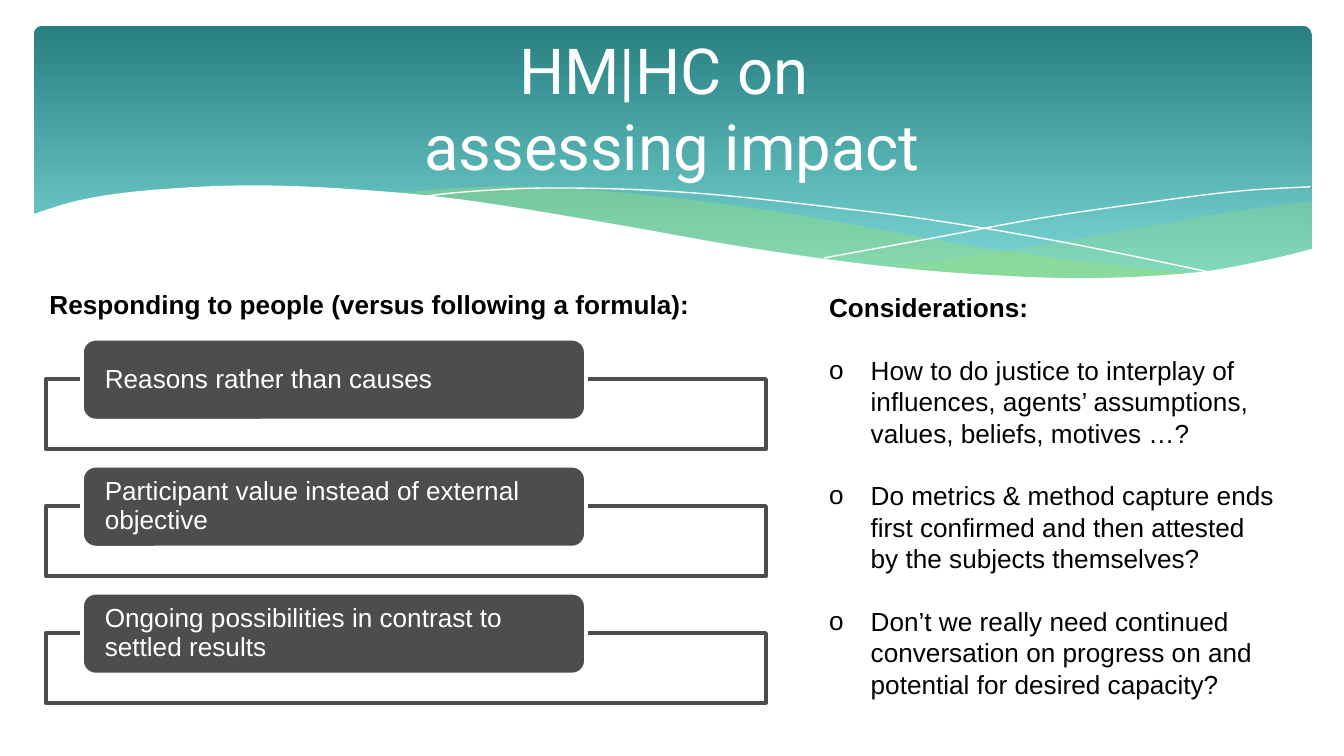
from lxml.etree import SubElement
from pptx import Presentation
from pptx.dml.color import RGBColor
from pptx.enum.shapes import MSO_SHAPE
from pptx.enum.text import MSO_ANCHOR, MSO_AUTO_SIZE, PP_ALIGN
from pptx.oxml.ns import qn
from pptx.util import Inches, Pt

COLORS = {"teal": "277F80", "aqua": "7AD6D6", "green": "99DE75",
          "white": "FFFFFF", "black": "000000", "gray": "4D4D4D"}
TITLE_LINES = ["HM|HC on ", "assessing impact"]
RESPONSE_HEADING = "Responding to people (versus following a formula):"
RESPONSES = ["Reasons rather than causes",
             "Participant value instead of external objective",
             "Ongoing possibilities in contrast to settled results"]
CONSIDERATION_HEADING = "Considerations:"
CONSIDERATIONS = [
    "How to do justice to interplay of influences, agents’ assumptions, values, beliefs, motives …?",
    "Do metrics & method capture ends first confirmed and then attested by the subjects themselves?",
    "Don’t we really need continued conversation on progress on and potential for desired capacity?",
]
RIGHT_WAVE = [
    [(9.76, 1.5), (9.21, 1.57), (8.61, 1.67), (7.53, 1.86), (6.61, 1.99)],
    [(6.61, 1.99), (7.19, 2.04), (7.81, 2.08), (8.35, 2.08), (8.89, 2.04),
     (9.35, 1.96), (9.76, 1.85)],
]
MIDDLE_WAVE = [
    [(8.93, 2.04), (8.07, 1.95), (7.06, 1.8), (6.29, 1.66), (5.55, 1.54),
     (4.89, 1.46), (4.2, 1.4), (3.61, 1.39), (2.86, 1.44)],
    [(2.86, 1.44), (3.62, 1.52), (4.49, 1.66), (5.66, 1.86), (6.5, 1.98),
     (7.22, 2.05), (7.85, 2.08), (8.38, 2.08), (8.93, 2.04)],
]
WHITE_WAVE = [
    [(9.77, 1.85), (9.4, 1.94), (8.87, 2.03), (8.09, 2.07), (7.26, 2.04), (6.48, 1.97),
     (5.55, 1.84), (4.47, 1.65), (3.4, 1.48), (2.5, 1.4), (1.77, 1.38), (1.06, 1.42),
     (0.59, 1.49), (0.23, 1.6)],
    [(0.23, 2.47), (9.77, 2.47)],
]
WAVE_LINES = [
    [(3.09, 1.47), (3.44, 1.43), (4.01, 1.4), (4.69, 1.41), (5.33, 1.45), (6.08, 1.53),
     (6.95, 1.64), (7.95, 1.81), (9.07, 2.04)],
    [(6.13, 1.92), (6.95, 1.77), (7.76, 1.62), (8.66, 1.49), (9.24, 1.42), (9.75, 1.39)],
]


def rgb(name):
    """Return the named color."""
    return RGBColor.from_string(COLORS[name])


def smooth_curve(knots, steps=6):
    """Interpolate a Catmull-Rom curve through the knots."""
    padded = [knots[0], *knots, knots[-1]]
    points = [knots[0]]
    for before, start, end, after in zip(padded, padded[1:], padded[2:], padded[3:]):
        for step in range(1, steps + 1):
            t = step / steps
            points.append(tuple(
                b + ((c - a) * t + (2 * a - 5 * b + 4 * c - d) * t ** 2
                     + (3 * b - a - 3 * c + d) * t ** 3) / 2
                for a, b, c, d in zip(before, start, end, after)))
    return points


def add_wave(slide, edges, fill=None, opacity=100):
    """Draw a filled wave, or a thin white line when no fill is named."""
    points = [(Inches(x), Inches(y)) for edge in edges for x, y in smooth_curve(edge)]
    builder = slide.shapes.build_freeform(*points[0])
    builder.add_line_segments(points[1:], close=fill is not None)
    wave = builder.convert_to_shape()
    wave.shadow.inherit = False
    if fill is None:
        wave.fill.background()
        wave.line.color.rgb = rgb("white")
        wave.line.width = Pt(0.75)
        return
    wave.fill.solid()
    wave.fill.fore_color.rgb = rgb(fill)
    wave.line.fill.background()
    if opacity < 100:
        color = wave.element.spPr.find(qn("a:solidFill"))[0]
        SubElement(color, qn("a:alpha"), val=str(opacity * 1000))


def add_box(slide, kind, left, top, width, height, fill, line):
    """Add a flat outlined shape."""
    box = slide.shapes.add_shape(kind, Inches(left), Inches(top), Inches(width), Inches(height))
    box.shadow.inherit = False
    box.fill.solid()
    box.fill.fore_color.rgb = rgb(fill)
    box.line.color.rgb = rgb(line)
    box.line.width = Pt(2)
    return box


def add_run(paragraph, text, color="black", size=14, font="Arial", bold=False):
    """Add one formatted run."""
    run = paragraph.add_run()
    run.text = text
    run.font.name = font
    run.font.size = Pt(size)
    run.font.bold = bold
    run.font.color.rgb = rgb(color)


def add_text_box(slide, left, top, width, height, heading):
    """Add a wrapping text box that opens with a bold heading."""
    box = slide.shapes.add_textbox(Inches(left), Inches(top), Inches(width), Inches(height))
    box.text_frame.word_wrap = True
    add_run(box.text_frame.paragraphs[0], heading, bold=True)
    return box.text_frame


def add_banner(slide):
    """Draw the gradient banner and its waves."""
    banner = add_box(slide, MSO_SHAPE.ROUNDED_RECTANGLE, 0.25, 0.19, 9.51, 2.02, "teal", "teal")
    banner.adjustments[0] = 0.034
    banner.line.fill.background()
    banner.fill.gradient()
    banner.fill.gradient_angle = 270
    for stop, (position, color) in zip(banner.fill.gradient_stops, [(0, "teal"), (0.9, "aqua")]):
        stop.position = position
        stop.color.rgb = rgb(color)
    add_wave(slide, RIGHT_WAVE, "green", 29)
    add_wave(slide, MIDDLE_WAVE, "green", 40)
    for line in WAVE_LINES:
        add_wave(slide, [line])
    add_wave(slide, WHITE_WAVE, "white")


def format_title(slide):
    """Place the title above the banner and fill it in."""
    title = slide.shapes.title
    title.element.getparent().append(title.element)
    title.left, title.top, title.width, title.height = map(Inches, (0.5, 0.28, 9, 1.03))
    frame = title.text_frame
    frame.auto_size = MSO_AUTO_SIZE.NONE
    frame.vertical_anchor = MSO_ANCHOR.MIDDLE
    paragraph = frame.paragraphs[0]
    paragraph.alignment = PP_ALIGN.CENTER
    for index, line in enumerate(TITLE_LINES):
        if index:
            paragraph.add_line_break()
        add_run(paragraph, line, "white", 34, "Roboto")


def add_responses(slide):
    """Stack the labelled frames on the left."""
    add_text_box(slide, 0.27, 2.1, 5.43, 0.34, RESPONSE_HEADING)
    for index, response in enumerate(RESPONSES):
        top = 2.52 + index * 1.89 / 2
        add_box(slide, MSO_SHAPE.RECTANGLE, 0.34, top + 0.3, 5.36, 0.52, "white", "gray")
        label = add_box(slide, MSO_SHAPE.ROUNDED_RECTANGLE, 0.61, top, 3.75, 0.61, "gray", "white")
        frame = label.text_frame
        frame.word_wrap = True
        frame.vertical_anchor = MSO_ANCHOR.MIDDLE
        frame.margin_left = frame.margin_right = Inches(0.14)
        frame.margin_top = frame.margin_bottom = 0
        paragraph = frame.paragraphs[0]
        paragraph.alignment = PP_ALIGN.LEFT
        paragraph.line_spacing = 0.9
        add_run(paragraph, response, "white")


def add_considerations(slide):
    """List the bulleted questions on the right."""
    frame = add_text_box(slide, 6.07, 2.12, 3.52, 3.16, CONSIDERATION_HEADING)
    for consideration in CONSIDERATIONS:
        paragraph = frame.add_paragraph()
        paragraph.space_before = Pt(16.8)
        add_run(paragraph, consideration)
        properties = paragraph._p.get_or_add_pPr()
        properties.set("marL", str(Inches(0.31)))
        properties.set("indent", str(-Inches(0.31)))
        SubElement(properties, qn("a:buFont"), typeface="Arial")
        SubElement(properties, qn("a:buChar"), char="o")


def main():
    """Build and save the slide."""
    presentation = Presentation()
    presentation.slide_width = Inches(10)
    presentation.slide_height = presentation.slide_width * 9 // 16
    slide = presentation.slides.add_slide(presentation.slide_layouts[5])
    add_banner(slide)
    format_title(slide)
    add_responses(slide)
    add_considerations(slide)
    presentation.save("out.pptx")


if __name__ == "__main__":
    main()
